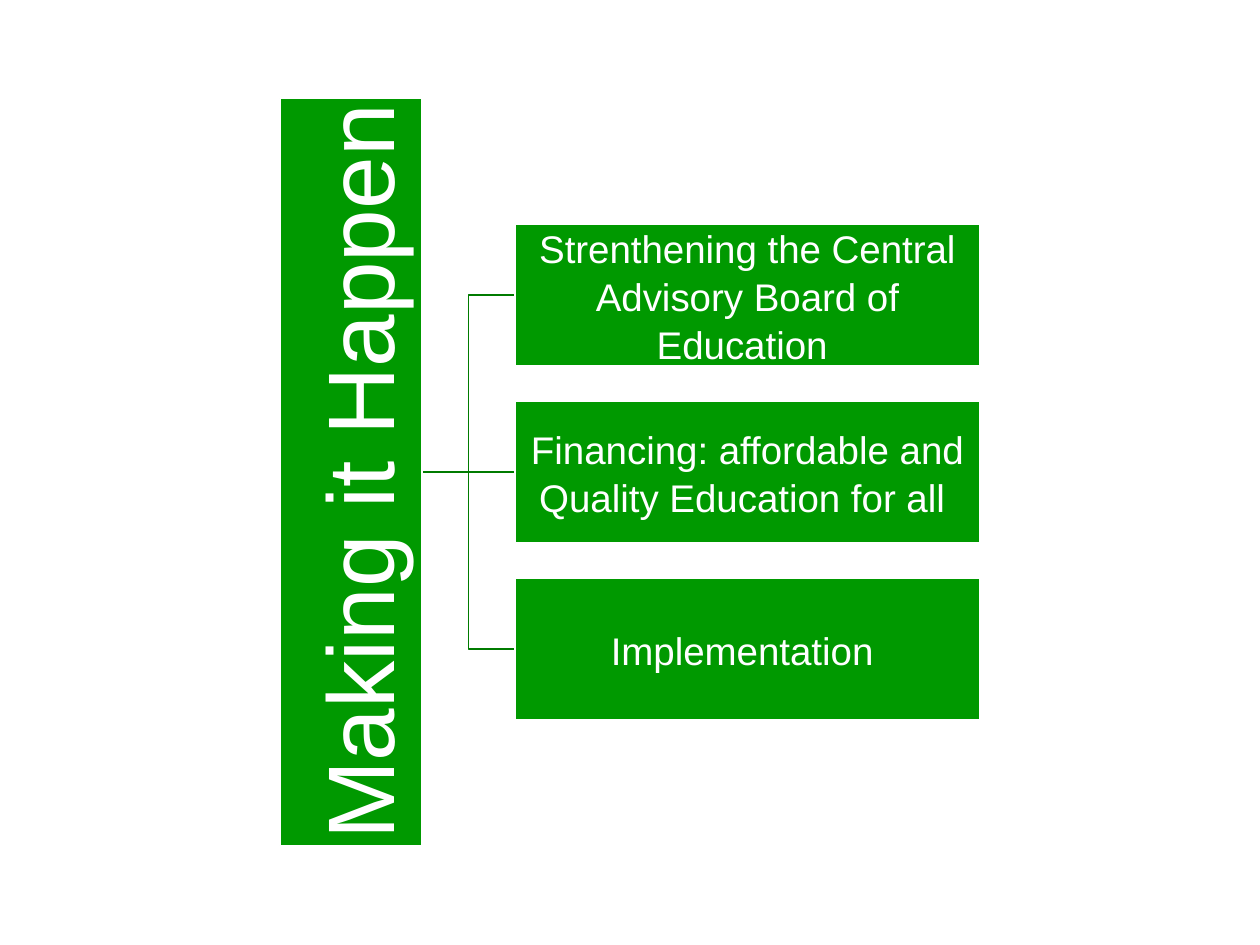
from lxml.etree import SubElement
from pptx import Presentation
from pptx.dml.color import RGBColor
from pptx.enum.shapes import MSO_CONNECTOR, MSO_SHAPE
from pptx.enum.text import MSO_ANCHOR, PP_ALIGN
from pptx.oxml.ns import qn
from pptx.util import Pt

PX = 914400 // 126
GREEN, DARK_GREEN, WHITE = "009900", "007B00", "FFFFFF"
BRANCHES = [
    "Strenthening the Central Advisory Board of Education ",
    "Financing: affordable and Quality Education for all ",
    "Implementation ",
]


def px(*lengths):
    return [round(length * PX) for length in lengths]


def color(value):
    return RGBColor.from_string(value)


def add_box(slide, left, top, width, height, text, size, insets, rotation=0):
    """Insets are top, then the other three sides."""
    box = slide.shapes.add_shape(MSO_SHAPE.RECTANGLE, *px(left, top, width, height))
    box.rotation = rotation
    box.shadow.inherit = False
    box.fill.solid()
    box.fill.fore_color.rgb = color(GREEN)
    box.line.color.rgb = color(WHITE)
    box.line.width = Pt(1)

    frame = box.text_frame
    frame.word_wrap = True
    frame.vertical_anchor = MSO_ANCHOR.MIDDLE
    frame.margin_top, side = px(*insets)
    frame.margin_left = frame.margin_right = frame.margin_bottom = side
    label = frame.paragraphs[0]
    label.text = text
    label.alignment = PP_ALIGN.CENTER
    label.line_spacing = 1.04
    label.font.size = Pt(size)
    label.font.name = "Arial"
    label.font.color.rgb = color(WHITE)


def add_link(slide, start, end):
    """Straight when level, otherwise an elbow that turns halfway."""
    kind = MSO_CONNECTOR.STRAIGHT if start[1] == end[1] else MSO_CONNECTOR.ELBOW
    link = slide.shapes.add_connector(kind, *px(*start, *end))
    link.line.color.rgb = color(DARK_GREEN)
    link.line.width = Pt(1)
    SubElement(link._element.spPr, qn("a:effectLst"))


def add_hierarchy(slide, left, top, width, height):
    thickness, branch_width, pitch = 142, 465, 177
    middle = top + height // 2
    branch_left = left + width - branch_width
    centers = [middle + (i - 1) * pitch for i in range(len(BRANCHES))]

    for center in centers:
        add_link(slide, (left + thickness, middle), (branch_left, center))

    # The root is laid out flat, then turned about its centre.
    add_box(slide, left + (thickness - height) / 2, middle - thickness / 2,
            height, thickness, "Making it Happen ", 54, (13, 5), rotation=270)
    for center, text in zip(centers, BRANCHES):
        add_box(slide, branch_left, center - thickness / 2,
                branch_width, thickness, text, 22, (3, 3))


def main():
    deck = Presentation()
    deck.slide_width, deck.slide_height = px(1260, 945)
    slide = deck.slides.add_slide(deck.slide_layouts[6])
    add_hierarchy(slide, 280, 99, 700, 747)
    deck.save("out.pptx")


if __name__ == "__main__":
    main()
